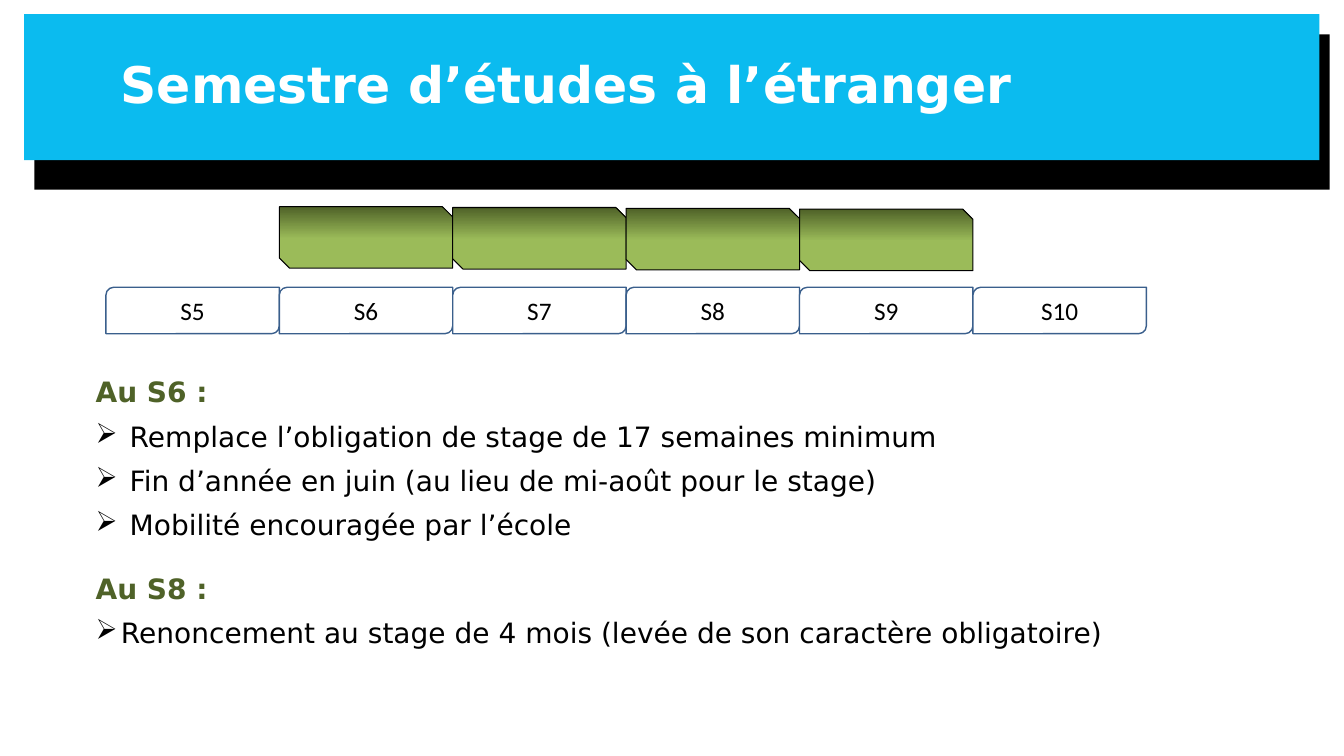
from copy import deepcopy
from dataclasses import dataclass

from lxml.etree import SubElement
from pptx import Presentation
from pptx.dml.color import RGBColor
from pptx.enum.shapes import MSO_SHAPE
from pptx.enum.text import MSO_ANCHOR, MSO_AUTO_SIZE, PP_ALIGN
from pptx.oxml.ns import qn
from pptx.util import Cm, Pt


@dataclass(frozen=True)
class Theme:
    black: RGBColor = RGBColor(0x00, 0x00, 0x00)
    white: RGBColor = RGBColor(0xFF, 0xFF, 0xFF)
    banner: RGBColor = RGBColor(0x0B, 0xBB, 0xEF)
    green: RGBColor = RGBColor(0x9B, 0xBB, 0x59)
    dark_green: RGBColor = RGBColor(0x4F, 0x62, 0x28)
    outline: RGBColor = RGBColor(0x3A, 0x5F, 0x8C)
    font: str = "DejaVu Sans"
    label_font: str = "Calibri"
    title_size: Pt = Pt(36)
    body_size: Pt = Pt(20)
    label_size: Pt = Pt(18)


theme = Theme()


def style_text(paragraph, font_name, size, color, bold=False):
    for run in paragraph.runs:
        run.font.name = font_name
        run.font.size = size
        run.font.color.rgb = color
        run.font.bold = bold


def add_flat_shape(kind, left, top, width, height, fill_color):
    """Add a shape without shadow; lengths are in centimetres."""
    shape = slide.shapes.add_shape(kind, Cm(left), Cm(top), Cm(width), Cm(height))
    shape.shadow.inherit = False
    shape.fill.solid()
    shape.fill.fore_color.rgb = fill_color
    return shape


prs = Presentation()
prs.slide_width, prs.slide_height = Cm(33.87), Cm(19.05)
slide = prs.slides.add_slide(prs.slide_layouts[5])

# Title on its banner
title = slide.shapes.title
title.left, title.top, title.width, title.height = Cm(2.34), Cm(0.36), Cm(29.21), Cm(3.68)
title_frame = title.text_frame
title_frame.text = "Semestre d’études à l’étranger"
title_frame.margin_left = Cm(0.7)
title_frame.vertical_anchor = MSO_ANCHOR.MIDDLE
title_frame.auto_size = MSO_AUTO_SIZE.NONE
title_frame.paragraphs[0].alignment = PP_ALIGN.LEFT
title_frame.paragraphs[0].line_spacing = 0.9
style_text(title_frame.paragraphs[0], theme.font, theme.title_size, theme.white, bold=True)

for left, top, height, color in [
    (0.87, 0.87, 3.91, theme.black),
    (0.61, 0.36, 3.68, theme.banner),
]:
    band = add_flat_shape(MSO_SHAPE.RECTANGLE, left, top, 32.64, height, color)
    band.line.fill.background()
    title._element.addprevious(band._element)

# Semester timeline, with the semesters open to mobility marked above
semesters = ["S5", "S6", "S7", "S8", "S9", "S10"]
timeline_left, semester_width = 2.67, 4.37

for column, name in enumerate(semesters):
    semester = add_flat_shape(
        MSO_SHAPE.ROUND_2_DIAG_RECTANGLE,
        timeline_left + column * semester_width, 7.24, semester_width, 1.17, theme.white,
    )
    semester.line.color.rgb = theme.outline
    semester.line.width = Pt(1)
    semester.text_frame.text = name
    semester.text_frame.vertical_anchor = MSO_ANCHOR.MIDDLE
    semester.text_frame.paragraphs[0].alignment = PP_ALIGN.CENTER
    style_text(semester.text_frame.paragraphs[0], theme.label_font, theme.label_size, theme.black)

for step, name in enumerate(["S6", "S7", "S8", "S9"]):
    mobility = add_flat_shape(
        MSO_SHAPE.SNIP_2_DIAG_RECTANGLE,
        timeline_left + semesters.index(name) * semester_width, 5.21 + step * 0.02,
        semester_width, 1.55, theme.green,
    )
    mobility.line.color.rgb = theme.black
    mobility.line.width = Pt(0.75)
    mobility.fill.gradient()
    mobility.fill.gradient_angle = 90
    first_stop, last_stop = mobility.fill.gradient_stops
    first_stop.color.rgb, first_stop.position = theme.green, 0
    last_stop.color.rgb, last_stop.position = theme.dark_green, 1
    stop_list = mobility._element.spPr.find(".//" + qn("a:gsLst"))
    middle_stop = deepcopy(stop_list[0])
    middle_stop.set("pos", "48000")
    stop_list.insert(1, middle_stop)

# Conditions: text, bullet indent in cm (None for a heading), space before in pt
conditions = [
    ("Au S6 :", None, 0),
    ("Remplace l’obligation de stage de 17 semaines minimum", 0.86, 10),
    ("Fin d’année en juin (au lieu de mi-août pour le stage)", 0.86, 10),
    ("Mobilité encouragée par l’école", 0.86, 10),
    ("Au S8 :", None, 24),
    ("Renoncement au stage de 4 mois (levée de son caractère obligatoire)", 0.64, 10),
]
conditions_box = slide.shapes.add_textbox(Cm(2.16), Cm(9.42), Cm(29.57), Cm(7.52))
conditions_frame = conditions_box.text_frame
conditions_frame.word_wrap = True

for index, (text, indent, space_before) in enumerate(conditions):
    paragraph = conditions_frame.add_paragraph() if index else conditions_frame.paragraphs[0]
    paragraph.text = text
    paragraph.line_spacing = 0.9
    paragraph.space_before = Pt(space_before)
    if indent is None:
        style_text(paragraph, theme.font, theme.body_size, theme.dark_green, bold=True)
    else:
        properties = paragraph._p.get_or_add_pPr()
        properties.set("marL", str(Cm(indent)))
        properties.set("indent", str(-Cm(indent)))
        SubElement(properties, qn("a:buChar")).set("char", "➢")
        style_text(paragraph, theme.font, theme.body_size, theme.black)

prs.save("out.pptx")
